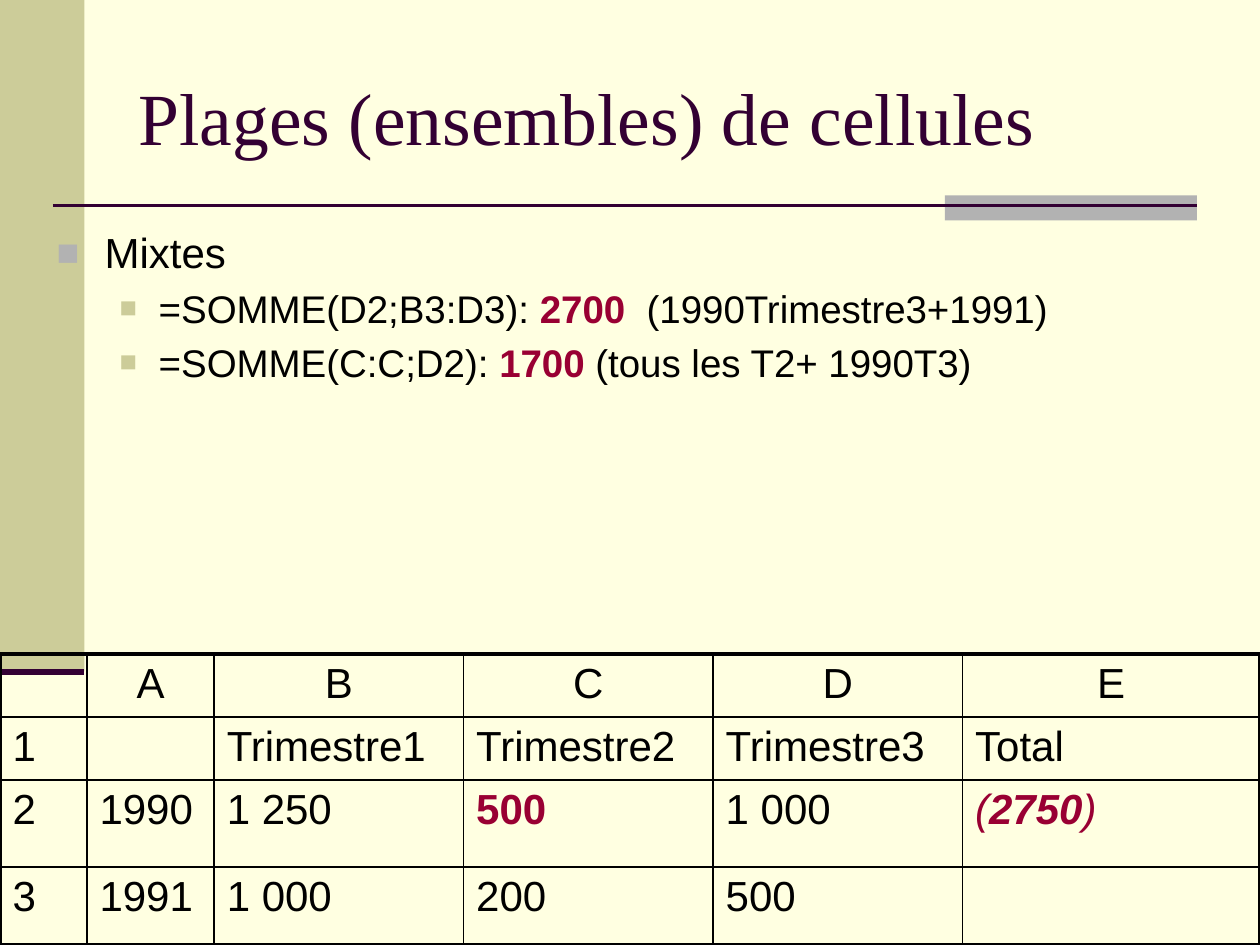
"""Build a slide on mixed cell ranges, with a sample spreadsheet."""
from dataclasses import dataclass

from lxml import etree
from pptx import Presentation
from pptx.dml.color import RGBColor
from pptx.enum.shapes import MSO_CONNECTOR, MSO_SHAPE
from pptx.enum.text import MSO_ANCHOR, MSO_AUTO_SIZE, PP_ALIGN
from pptx.oxml.ns import qn
from pptx.util import Inches, Pt

RECT, STRAIGHT = MSO_SHAPE.RECTANGLE, MSO_CONNECTOR.STRAIGHT
MIDDLE, TOP = MSO_ANCHOR.MIDDLE, MSO_ANCHOR.TOP
LEFT, CENTER, NO_FIT = PP_ALIGN.LEFT, PP_ALIGN.CENTER, MSO_AUTO_SIZE.NONE
CREAM = RGBColor(0xFF, 0xFF, 0xE1)
OLIVE = RGBColor(0xCC, 0xCC, 0x99)
GREY = RGBColor(0xB2, 0xB2, 0xB2)
PLUM = RGBColor(0x33, 0x00, 0x33)
RED = RGBColor(0x99, 0x00, 0x33)
BLACK = RGBColor(0, 0, 0)


@dataclass
class Run:
    text: str
    color: RGBColor = BLACK
    bold: bool = False
    italic: bool = False


@dataclass
class Item:
    runs: list[Run]
    level: int = 1


@dataclass
class Bullet:
    color: RGBColor
    percent: int
    margin: float
    hang: float
    size: int


@dataclass
class Bar:
    left: float
    top: float
    width: float
    height: float
    color: RGBColor


@dataclass
class Rule:
    start: float
    end: float
    y: float
    weight: float


BARS = [Bar(0, 0, 0.67, 5.33, OLIVE), Bar(7.5, 1.55, 2, 0.2, GREY)]
RULES = [Rule(0.42, 9.5, 1.63, 1.5), Rule(0, 0.67, 5.33, 3.5)]
BULLETS = [Bullet(GREY, 90, 0.38, 0.38, 24), Bullet(OLIVE, 75, 0.81, 0.31, 22)]
ITEMS = [
    Item([Run("Mixtes")], 0),
    Item([Run("=SOMME(D2;B3:D3): "), Run("2700", RED, True),
          Run("  (1990Trimestre3+1991)")]),
    Item([Run("=SOMME(C:C;D2): "), Run("1700", RED, True),
          Run(" (tous les T2+ 1990T3)")]),
]
COLS = [0.69, 1.01, 1.98, 1.98, 1.98, 2.36]
ROWS = [0.5, 0.5, 0.69, 0.62]
CELLS = [
    ["", "A", "B", "C", "D", "E"],
    ["1", "", "Trimestre1", "Trimestre2", "Trimestre3", "Total"],
    ["2", "1990", "1 250", [Run("500", RED, True)], "1 000",
     [Run("(", RED, italic=True), Run("2750", RED, True, True),
      Run(")", RED, italic=True)]],
    ["3", "1991", "1 000", "200", "500", ""],
]


def write(p, text, size=24, font="Arial", color=BLACK, bold=False, italic=False) -> None:
    r = p.add_run()
    r.text = text
    r.font.size = Pt(size)
    r.font.name = font
    r.font.color.rgb = color
    r.font.bold = bold
    r.font.italic = italic


def write_runs(p, runs: list[Run], size: int = 24) -> None:
    for run in runs:
        write(p, run.text, size, color=run.color, bold=run.bold, italic=run.italic)


def place(sp, left: float, top: float, width: float, height: float, anchor):
    sp.left, sp.top = Inches(left), Inches(top)
    sp.width, sp.height = Inches(width), Inches(height)
    tf = sp.text_frame
    tf.auto_size = NO_FIT
    tf.vertical_anchor = anchor
    return tf


def draw_bar(s, bar: Bar) -> None:
    sp = s.shapes.add_shape(RECT, Inches(bar.left), Inches(bar.top),
                            Inches(bar.width), Inches(bar.height))
    sp.shadow.inherit = False
    sp.fill.solid()
    sp.fill.fore_color.rgb = bar.color
    sp.line.fill.background()


def draw_rule(s, rule: Rule) -> None:
    sp = s.shapes.add_connector(STRAIGHT, Inches(rule.start), Inches(rule.y),
                                Inches(rule.end), Inches(rule.y))
    sp.line.color.rgb = PLUM
    sp.line.width = Pt(rule.weight)
    etree.SubElement(sp._element.spPr, qn("a:effectLst"))


def set_bullet(p, bullet: Bullet) -> None:
    ppr = p._p.get_or_add_pPr()
    ppr.set("marL", str(Inches(bullet.margin)))
    ppr.set("indent", str(-Inches(bullet.hang)))
    color = etree.SubElement(ppr, qn("a:buClr"))
    etree.SubElement(color, qn("a:srgbClr"), val=str(bullet.color))
    etree.SubElement(ppr, qn("a:buSzPct"), val=str(bullet.percent * 1000))
    etree.SubElement(ppr, qn("a:buFont"), typeface="Arial")
    etree.SubElement(ppr, qn("a:buChar"), char="■")


def set_borders(cell, outer: dict[str, bool]) -> None:
    tcpr = cell._tc.get_or_add_tcPr()
    for side, is_outer in outer.items():
        width = Pt(2.25 if is_outer else 1)
        ln = etree.SubElement(tcpr, qn(f"a:ln{side}"), w=str(width))
        fill = etree.SubElement(ln, qn("a:solidFill"))
        etree.SubElement(fill, qn("a:srgbClr"), val=str(BLACK))


def draw_sheet(s) -> None:
    table = s.shapes.add_table(len(ROWS), len(COLS), 0, Inches(5.19),
                               Inches(sum(COLS)), Inches(sum(ROWS))).table
    for col, width in zip(table.columns, COLS):
        col.width = Inches(width)
    for i, height in enumerate(ROWS):
        table.rows[i].height = Inches(height)
        for j, value in enumerate(CELLS[i]):
            cell = table.cell(i, j)
            set_borders(cell, {"L": j == 0, "R": j == len(COLS) - 1,
                               "T": i == 0, "B": i == len(ROWS) - 1})
            cell.fill.background()
            p = cell.text_frame.paragraphs[0]
            p.alignment = CENTER if i == 0 else LEFT
            if value:
                write_runs(p, [Run(value)] if isinstance(value, str) else value)


def main() -> None:
    prs = Presentation()
    prs.slide_width, prs.slide_height = Inches(10), Inches(7.5)
    s = prs.slides.add_slide(prs.slide_layouts[1])
    s.background.fill.solid()
    s.background.fill.fore_color.rgb = CREAM
    title, body = s.placeholders
    for bar in BARS:
        draw_bar(s, bar)
    for rule in RULES:
        draw_rule(s, rule)
    for sp in (title, body):
        s.shapes._spTree.append(sp._element)

    p = place(title, 1, 0.3, 8.5, 1.25, MIDDLE).paragraphs[0]
    p.alignment = LEFT
    write(p, "Plages (ensembles) de cellules", 42, "Times New Roman", PLUM)

    tf = place(body, 0.35, 1.75, 9.65, 3.57, TOP)
    for i, item in enumerate(ITEMS):
        p = tf.add_paragraph() if i else tf.paragraphs[0]
        p.level = item.level
        set_bullet(p, BULLETS[item.level])
        write_runs(p, item.runs, BULLETS[item.level].size)
    draw_sheet(s)
    prs.save("out.pptx")


if __name__ == "__main__":
    main()
